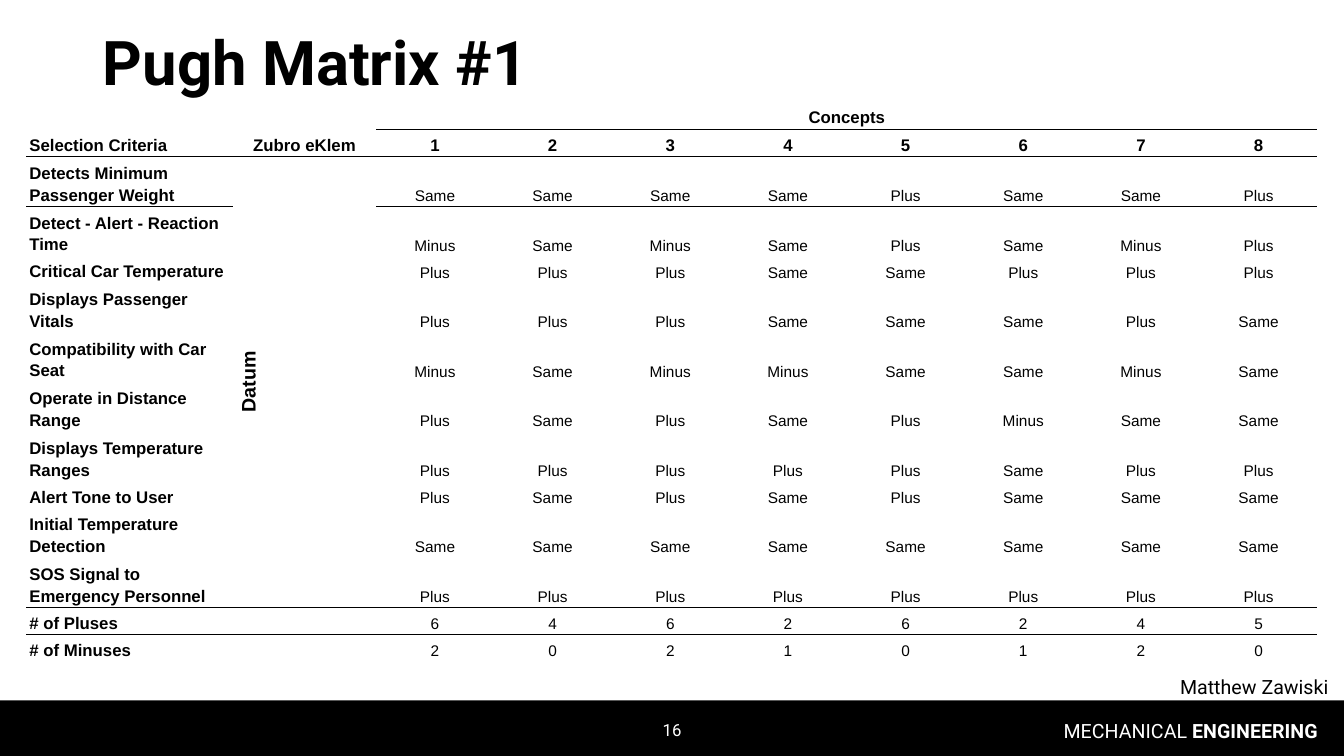
import lxml.etree
import pptx
import pptx.dml.color
import pptx.enum.shapes
import pptx.enum.text
import pptx.oxml.ns
import pptx.util

Cm = pptx.util.Cm
Pt = pptx.util.Pt
ALIGN = pptx.enum.text.PP_ALIGN
ANCHOR = pptx.enum.text.MSO_ANCHOR
qn = pptx.oxml.ns.qn

COLOURS = {"ink": "000000", "paper": "FFFFFF"}
HEADING_FONT, TABLE_FONT = "Roboto", "Arial"
NO_TABLE_STYLE = "{2D5ABB26-0587-4C30-8999-92F81FD0307C}"

# S, P and M stand for the ratings Same, Plus and Minus.
RATINGS = {"S": "Same", "P": "Plus", "M": "Minus"}
CRITERIA = [
    ("Detects Minimum Passenger Weight", "SSSSPSSP"),
    ("Detect - Alert - Reaction Time", "MSMSPSMP"),
    ("Critical Car Temperature", "PPPSSPPP"),
    ("Displays Passenger Vitals", "PPPSSSPS"),
    ("Compatibility with Car Seat", "MSMMSSMS"),
    ("Operate in Distance Range", "PSPSPMSS"),
    ("Displays Temperature Ranges", "PPPPPSPP"),
    ("Alert Tone to User", "PSPSPSSS"),
    ("Initial Temperature Detection", "SSSSSSSS"),
    ("SOS Signal to Emergency Personnel", "PPPPPPPP"),
]
ONE_LINE_CRITERIA = {"Critical Car Temperature", "Alert Tone to User"}
TOTALS = [("# of Pluses", "64626245"), ("# of Minuses", "20210120")]
CONCEPTS = 8
FIRST_CRITERION, LAST_CRITERION = 2, 1 + len(CRITERIA)
COLUMNS = range(2 + CONCEPTS)
# Columns that carry a line beneath them, by row
RULES = {0: COLUMNS[2:], 1: COLUMNS, LAST_CRITERION: COLUMNS}


def style(para, size, colour="ink", name=HEADING_FONT, bold=False,
          align=ALIGN.LEFT, spacing=1.0):
    para.alignment = align
    para.line_spacing = spacing
    font = para.font
    font.size, font.name, font.bold = Pt(size), name, bold
    font.color.rgb = pptx.dml.color.RGBColor.from_string(COLOURS[colour])


def add_label(page, box, text, size, anchor=ANCHOR.TOP, **looks):
    label = page.shapes.add_textbox(*map(Cm, box))
    frame = label.text_frame
    frame.word_wrap = True
    frame.vertical_anchor = anchor
    para = frame.paragraphs[0]
    para.text = text
    style(para, size, **looks)
    return label


def add_footer(page, box):
    left, top, width, height = box
    band = page.shapes.add_shape(
        pptx.enum.shapes.MSO_SHAPE.RECTANGLE, *map(Cm, box))
    band.shadow.inherit = False
    band.fill.solid()
    band.fill.fore_color.rgb = pptx.dml.color.RGBColor.from_string(COLOURS["ink"])
    band.line.fill.background()

    department = add_label(page, (left + width - 8.03, top + 0.33, 7.62, 1.02),
                           "MECHANICAL ", 14, colour="paper", align=ALIGN.RIGHT)
    span = department.text_frame.paragraphs[0].add_run()
    span.text = "ENGINEERING"
    span.font.bold = True
    add_label(page, (left + 13.13, top + 0.23, 7.62, 1.02), "16", 12,
              anchor=ANCHOR.MIDDLE, colour="paper", align=ALIGN.CENTER)


def add_title(page, box):
    title = page.shapes.title
    title.left, title.top, title.width, title.height = map(Cm, box)
    title.text_frame.vertical_anchor = ANCHOR.MIDDLE
    para = title.text_frame.paragraphs[0]
    para.text = "Pugh Matrix #1"
    style(para, 44, bold=True, spacing=0.9)


def add_author(page, box):
    author = add_label(page, box, "Matthew Zawiski", 14,
                       align=ALIGN.RIGHT, spacing=0.9)
    author.text_frame.margin_right = Cm(0.38)


def matrix_rows():
    """Return the text of every cell, row by row."""
    rows = [["", "", "Concepts"] + [""] * (CONCEPTS - 1),
            ["Selection Criteria", "Zubro eKlem",
             *(str(number + 1) for number in range(CONCEPTS))]]
    rows += [[name, "", *(RATINGS[mark] for mark in marks)]
             for name, marks in CRITERIA]
    rows += [[name, "", *counts] for name, counts in TOTALS]
    rows[FIRST_CRITERION][1] = "Datum"
    return rows


def set_borders(cell, row, column):
    bottom_row = row + cell.span_height - 1 if cell.is_merge_origin else row
    properties = cell._tc.get_or_add_tcPr()
    for tag, rule_row in (("a:lnT", row - 1), ("a:lnB", bottom_row)):
        if column in RULES.get(rule_row, ()):
            line = lxml.etree.SubElement(properties, qn(tag), w=str(Pt(0.75)))
            fill = lxml.etree.SubElement(line, qn("a:solidFill"))
            lxml.etree.SubElement(fill, qn("a:srgbClr"), val=COLOURS["ink"])


def format_cell(cell, row, column, text):
    set_borders(cell, row, column)
    cell.fill.background()
    cell.margin_left = cell.margin_right = Cm(0.08)
    cell.margin_top = cell.margin_bottom = Cm(0.04)
    centred = text in ("Concepts", "Datum")
    cell.vertical_anchor = ANCHOR.MIDDLE if centred else ANCHOR.BOTTOM
    bold = row < FIRST_CRITERION or column < 2
    size = 14 if text == "Datum" else 12 if bold else 11
    para = cell.text_frame.paragraphs[0]
    if text:
        para.text = text
    else:
        para._p.get_or_add_endParaRPr().set("sz", str(size * 100))
    style(para, size, name=TABLE_FONT, bold=bold, spacing=1.15,
          align=ALIGN.CENTER if column else ALIGN.LEFT)


def add_matrix(page, box):
    rows = matrix_rows()
    table = page.shapes.add_table(len(rows), len(COLUMNS), *map(Cm, box)).table
    table.first_row = table.horz_banding = False
    table._tbl.tblPr.find(qn("a:tableStyleId")).text = NO_TABLE_STYLE

    lead_widths = [5.21, 3.61]
    concept_width = (box[2] - sum(lead_widths)) / CONCEPTS
    for column, width in zip(table.columns, lead_widths + [concept_width] * CONCEPTS):
        column.width = Cm(width)

    table.cell(0, 2).merge(table.cell(0, COLUMNS[-1]))
    datum = table.cell(FIRST_CRITERION, 1)
    datum.merge(table.cell(LAST_CRITERION, 1))
    for row, texts in enumerate(rows):
        tall = (FIRST_CRITERION <= row <= LAST_CRITERION
                and texts[0] not in ONE_LINE_CRITERIA)
        table.rows[row].height = Cm(1.24 if tall else 0.68)
        for column, text in enumerate(texts):
            format_cell(table.cell(row, column), row, column, text)
    datum._tc.get_or_add_tcPr().set("vert", "vert270")


def main():
    deck = pptx.Presentation()
    deck.slide_width, deck.slide_height = Cm(33.87), Cm(19.05)
    page = deck.slides.add_slide(deck.slide_layouts.get_by_name("Title Only"))
    add_footer(page, (0, 17.65, 33.87, 1.4))
    add_title(page, (2.34, -0.18, 29.21, 3.68))
    add_author(page, (24.97, 16.94, 8.89, 0.64))
    add_matrix(page, (0.66, 2.59, 32.54, 13.97))
    deck.save("out.pptx")


if __name__ == "__main__":
    main()
